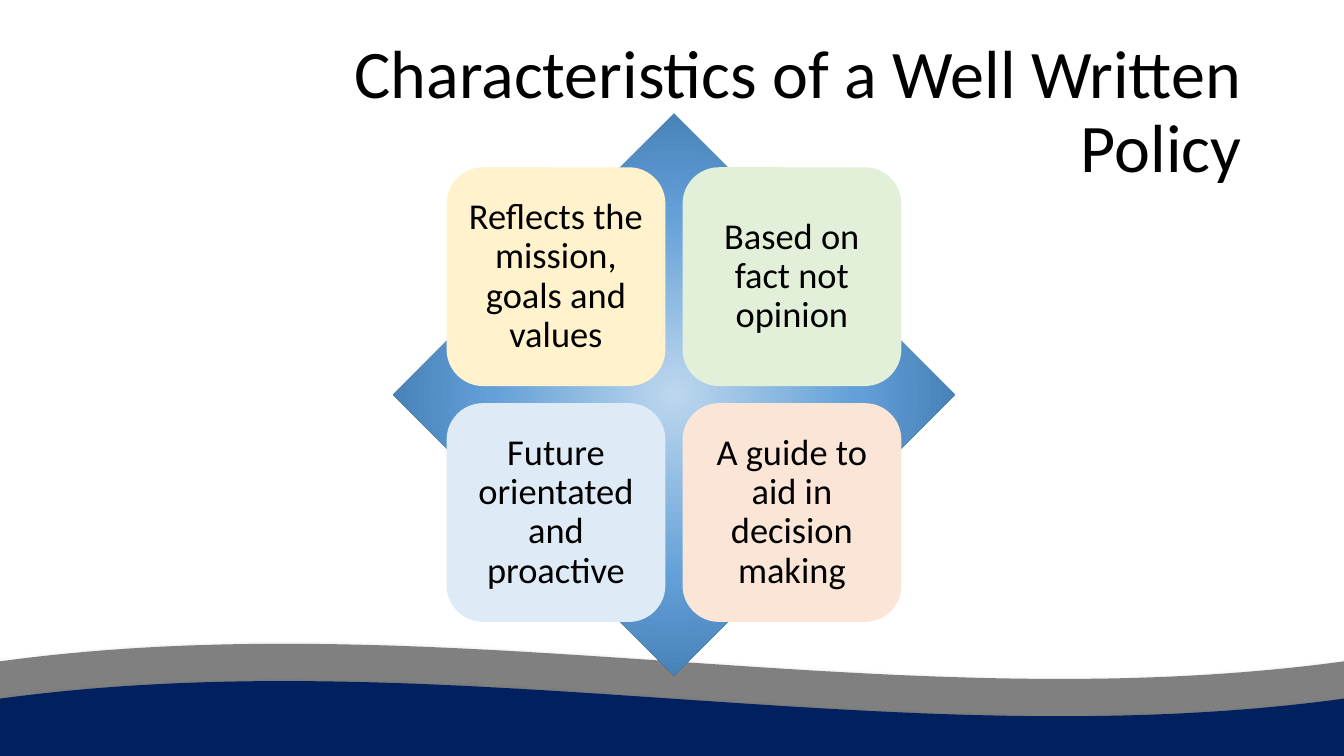
from lxml import etree
from pptx import Presentation
from pptx.dml.color import RGBColor
from pptx.enum.shapes import MSO_SHAPE
from pptx.enum.text import MSO_ANCHOR, PP_ALIGN
from pptx.oxml.ns import qn
from pptx.util import Inches, Pt

WAVE = MSO_SHAPE.WAVE
DIAMOND = MSO_SHAPE.DIAMOND
ROUNDED = MSO_SHAPE.ROUNDED_RECTANGLE
MIDDLE = MSO_ANCHOR.MIDDLE
CENTER, RIGHT = PP_ALIGN.CENTER, PP_ALIGN.RIGHT

BLACK = RGBColor(0x00, 0x00, 0x00)
GREY = RGBColor(0x80, 0x80, 0x80)
NAVY = RGBColor(0x00, 0x20, 0x60)
YELLOW = RGBColor(0xFF, 0xF2, 0xCC)
GREEN = RGBColor(0xE2, 0xF0, 0xD9)
BLUE = RGBColor(0xDE, 0xEB, 0xF7)
ORANGE = RGBColor(0xFB, 0xE5, 0xD6)
GLOW = [(0, RGBColor(0xBD, 0xD7, 0xEE)),
        (46, RGBColor(0x63, 0xA0, 0xD7)),
        (100, RGBColor(0x25, 0x5E, 0x91))]

FONT = "Calibri"
WAVES = [(6.38, GREY), (6.75, NAVY)]
CHARACTERISTICS = [
    ("Reflects the mission, goals and values", YELLOW),
    ("Based on fact not opinion", GREEN),
    ("Future orientated and proactive", BLUE),
    ("A guide to aid in decision making", ORANGE),
]
CARD_LEFT, CARD_TOP, CARD_SIZE, CARD_PITCH = 4.43, 1.66, 2.17, 2.34


def add_child(parent, tag, **attributes):
    child = etree.SubElement(parent, qn(tag))
    for name, value in attributes.items():
        child.set(name, str(value))
    return child


def add_plain_shape(slide, kind, left, top, width, height, color=None):
    shape = slide.shapes.add_shape(
        kind, Inches(left), Inches(top), Inches(width), Inches(height))
    shape.shadow.inherit = False
    shape.line.fill.background()
    if color is not None:
        shape.fill.solid()
        shape.fill.fore_color.rgb = color
    return shape


def write_text(shape, text, size, align):
    frame = shape.text_frame
    frame_format = {"word_wrap": True, "vertical_anchor": MIDDLE}
    for name, value in frame_format.items():
        setattr(frame, name, value)
    paragraph = frame.paragraphs[0]
    paragraph.text = text
    paragraph.alignment = align
    paragraph.line_spacing = 0.9
    for name, value in {"name": FONT, "size": Pt(size)}.items():
        setattr(paragraph.font, name, value)
    paragraph.font.color.rgb = BLACK


def add_wave(slide, top, color):
    wave = add_plain_shape(slide, WAVE, 0, top, 13.33, 1.45, color)
    effects = wave._element.spPr.find(qn("a:effectLst"))
    shadow = add_child(effects, "a:outerShdw", blurRad=Pt(3.5), dist=Pt(2.2),
                       dir=90 * 60000, rotWithShape=0)
    shade = add_child(shadow, "a:srgbClr", val=BLACK)
    add_child(shade, "a:alpha", val=32000)


def add_title(slide, text):
    title = slide.shapes.add_textbox(
        Inches(2.91), Inches(0.4), Inches(9.5), Inches(1.45))
    write_text(title, text, 48.6, RIGHT)


def add_glowing_diamond(slide):
    diamond = add_plain_shape(slide, DIAMOND, 3.9, 1.13, 5.57, 5.57)
    diamond.fill.gradient()
    gradient = diamond._element.spPr.find(qn("a:gradFill"))
    for child in list(gradient):
        gradient.remove(child)
    # Radial gradient from the centre outwards
    stops = add_child(gradient, "a:gsLst")
    for percent, color in GLOW:
        stop = add_child(stops, "a:gs", pos=percent * 1000)
        add_child(stop, "a:srgbClr", val=color)
    circle = add_child(gradient, "a:path", path="circle")
    add_child(circle, "a:fillToRect", l=50000, t=50000, r=50000, b=50000)


def add_card(slide, index, text, color):
    row, column = divmod(index, 2)
    card = add_plain_shape(slide, ROUNDED, CARD_LEFT + column * CARD_PITCH,
                           CARD_TOP + row * CARD_PITCH,
                           CARD_SIZE, CARD_SIZE, color)
    for side in ("left", "top", "right", "bottom"):
        setattr(card.text_frame, f"margin_{side}", Inches(0.1))
    write_text(card, text, 26, CENTER)


def main():
    presentation = Presentation()
    presentation.slide_width = Inches(13.33)
    presentation.slide_height = Inches(7.5)
    slide = presentation.slides.add_slide(presentation.slide_layouts[6])

    # Footer waves
    for top, color in WAVES:
        add_wave(slide, top, color)

    # Heading
    add_title(slide, "Characteristics of a Well Written Policy")

    # Diamond with its two-by-two cards
    add_glowing_diamond(slide)
    for index, (text, color) in enumerate(CHARACTERISTICS):
        add_card(slide, index, text, color)

    presentation.save("out.pptx")


if __name__ == "__main__":
    main()
